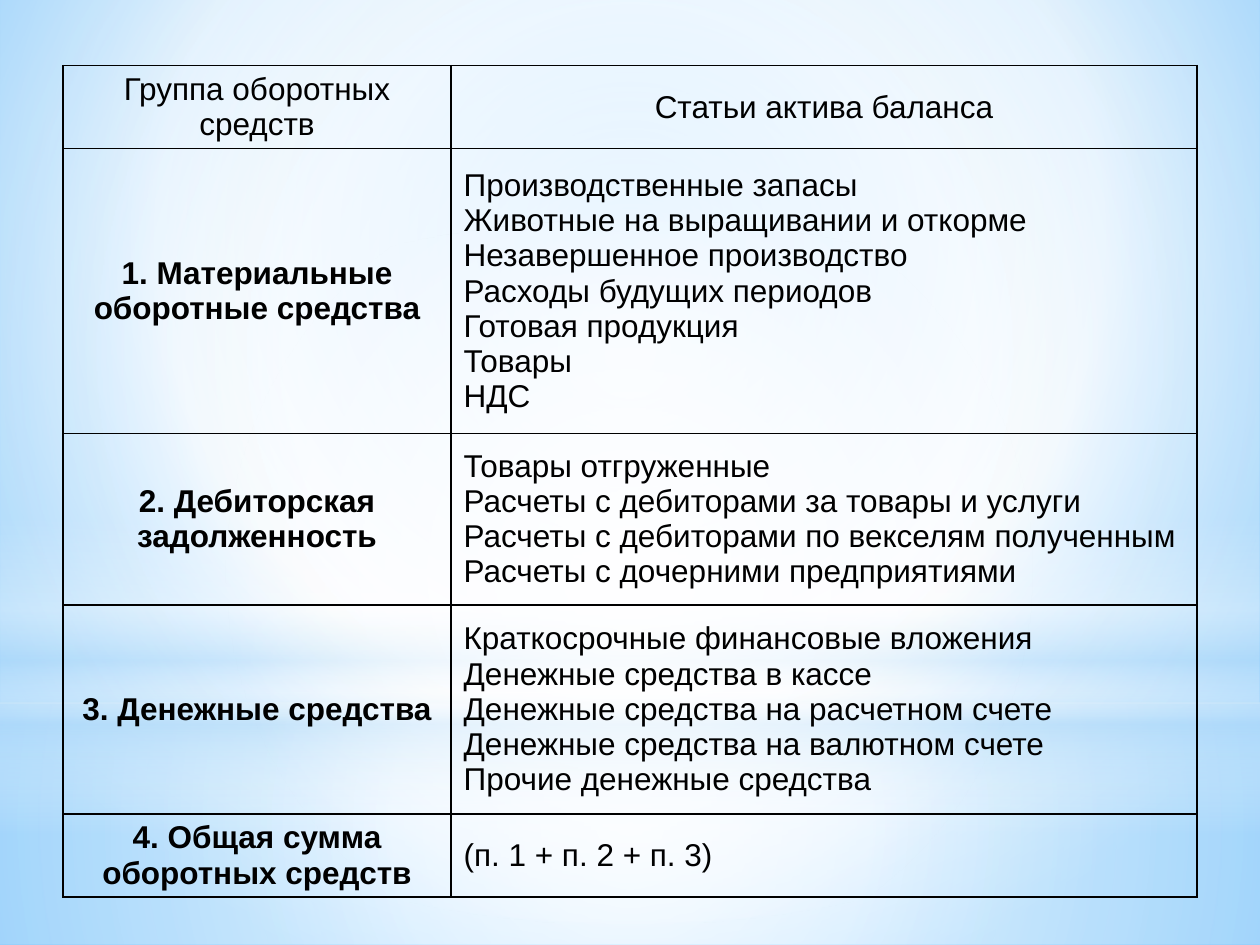
from pptx import Presentation
from pptx.dml.color import RGBColor
from pptx.enum.shapes import MSO_SHAPE as Shape
from pptx.enum.text import MSO_ANCHOR as Anchor, PP_ALIGN as Align
from pptx.oxml import parse_xml
from pptx.oxml.ns import nsdecls, qn
from pptx.util import Inches, Pt

COLORS = {"white": "FFFFFF", "sky": "9ED5FF", "azure": "5BB9FF",
          "pale": "B4DCFA", "ink": "000000"}
CENTER = (50, 50, 50, 50)


class SlideBuilder:
    """Holds the text style and the slide being built."""

    font, size, border = "Arial", 18, 1

    def __init__(self, slide):
        self.slide = slide

    def gradient(self, owner, fill, stops, focus=None):
        """Fill with (position, color, opacity) stops, radial if focus is given."""
        fill.gradient()
        stop_xml = "".join(
            f'<a:gs pos="{position * 1000}"><a:srgbClr val="{COLORS[color]}">'
            f'<a:alpha val="{opacity * 1000}"/></a:srgbClr></a:gs>'
            for position, color, opacity in stops)
        direction = '<a:lin ang="5400000" scaled="0"/>'
        if focus:
            sides = " ".join(f'{side}="{value * 1000}"'
                             for side, value in zip("ltrb", focus))
            direction = f'<a:path path="circle"><a:fillToRect {sides}/></a:path>'
        old = owner.find(".//" + qn("a:gradFill"))
        old.getparent().replace(old, parse_xml(
            f'<a:gradFill {nsdecls("a")} rotWithShape="1">'
            f'<a:gsLst>{stop_xml}</a:gsLst>{direction}</a:gradFill>'))

    def background(self, stops, focus):
        self.gradient(self.slide.element, self.slide.background.fill, stops, focus)

    def glow(self, kind, top, height, stops, focus=None):
        """Add a full-width translucent shape."""
        shape = self.slide.shapes.add_shape(
            kind, 0, Inches(top), Inches(10), Inches(height))
        shape.shadow.inherit = False
        shape.line.fill.background()
        self.gradient(shape.element, shape.fill, stops, focus)

    def cell(self, cell, lines, align, bold):
        cell.fill.background()
        cell.vertical_anchor = Anchor.MIDDLE
        cell.text = "\n".join(lines)
        for para in cell.text_frame.paragraphs:
            para.alignment = align
            font = para.font
            font.name, font.size, font.bold = self.font, Pt(self.size), bold
            font.color.rgb = RGBColor.from_string(COLORS["ink"])
        properties = cell.fill and cell._tc.get_or_add_tcPr()
        for index, side in enumerate(("lnL", "lnR", "lnT", "lnB")):
            properties.insert(index, parse_xml(
                f'<a:{side} {nsdecls("a")} w="{Pt(self.border)}"><a:solidFill>'
                f'<a:srgbClr val="{COLORS["ink"]}"/></a:solidFill></a:{side}>'))

    def table(self, left, top, widths, heights, rows):
        table = self.slide.shapes.add_table(
            len(rows), len(widths), Inches(left), Inches(top),
            Inches(sum(widths)), Inches(sum(heights))).table
        table.first_row = table.horz_banding = False
        for column, width in zip(table.columns, widths):
            column.width = Inches(width)
        for index, (group, items) in enumerate(rows):
            table.rows[index].height = Inches(heights[index])
            header = index == 0
            self.cell(table.cell(index, 0), [group], Align.CENTER, not header)
            self.cell(table.cell(index, 1), items,
                      Align.CENTER if header else Align.LEFT, False)


ROWS = [
    ("Группа оборотных средств", ["Статьи актива баланса"]),
    ("1. Материальные оборотные средства", [
        "Производственные запасы",
        "Животные на выращивании и откорме",
        "Незавершенное производство",
        "Расходы будущих периодов",
        "Готовая продукция",
        "Товары",
        "НДС"]),
    ("2. Дебиторская задолженность", [
        "Товары отгруженные",
        "Расчеты с дебиторами за товары и услуги",
        "Расчеты с дебиторами по векселям полученным",
        "Расчеты с дочерними предприятиями"]),
    ("3. Денежные средства", [
        "Краткосрочные финансовые вложения",
        "Денежные средства в кассе",
        "Денежные средства на расчетном счете",
        "Денежные средства на валютном счете",
        "Прочие денежные средства"]),
    ("4. Общая сумма оборотных средств", ["(п. 1 + п. 2 + п. 3)"]),
]


def main():
    deck = Presentation()
    deck.slide_width, deck.slide_height = Inches(10), Inches(7.5)
    page = SlideBuilder(deck.slides.add_slide(deck.slide_layouts[6]))

    # Sky background with layered light
    page.background([(0, "sky", 100), (60, "white", 100), (100, "azure", 100)],
                    (20, 10, 20, 60))
    page.glow(Shape.RECTANGLE, 5.58, 1.92,
              [(0, "white", 91), (37, "white", 76), (100, "pale", 79)], CENTER)
    page.glow(Shape.RECTANGLE, 0, 5.58,
              [(0, "white", 89), (48, "white", 62), (100, "pale", 79)], CENTER)
    page.glow(Shape.RECTANGLE, 4.12, 2.5,
              [(0, "white", 0), (29, "white", 30), (45, "pale", 40),
               (55, "white", 26), (65, "pale", 60), (100, "white", 0)])
    page.glow(Shape.OVAL, 1.75, 5.58,
              [(0, "white", 100), (56, "white", 0)], CENTER)

    # Working capital groups and their balance sheet items
    page.table(0.5, 0.52, [3.08, 5.92], [0.66, 2.26, 1.36, 1.66, 0.66], ROWS)

    deck.save("out.pptx")


if __name__ == "__main__":
    main()
